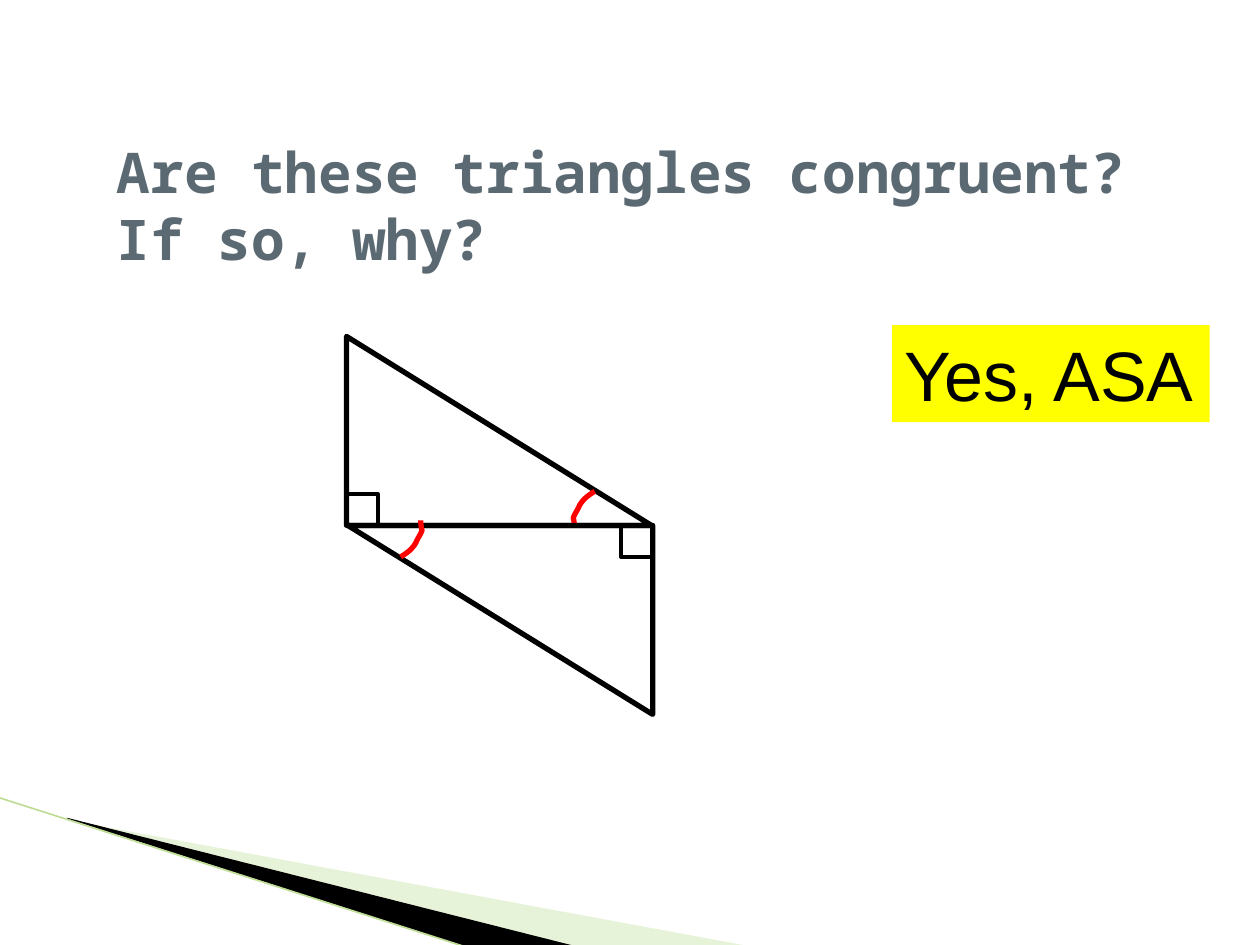
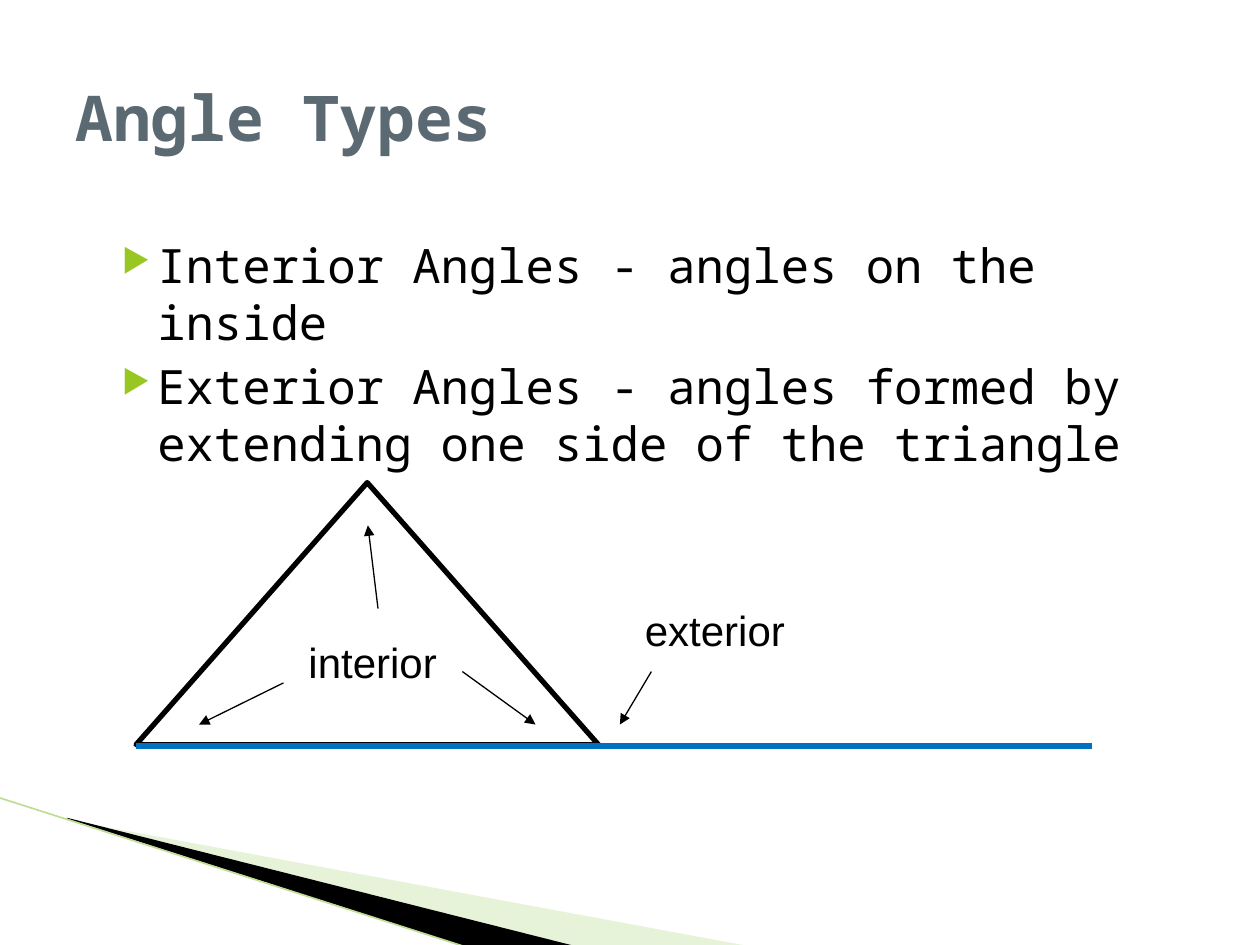
from lxml import etree
from pptx import Presentation
from pptx.dml.color import RGBColor
from pptx.enum.shapes import MSO_CONNECTOR, MSO_SHAPE
from pptx.enum.text import MSO_ANCHOR, MSO_AUTO_SIZE
from pptx.oxml.ns import qn
from pptx.util import Pt

PX = 9144
TITLE_FONT = BODY_FONT = "Noto Sans Mono"
LABEL_FONT = "Arial"
BLACK = "000000"
TITLE_COLOR = "5B6973"
BULLET_COLOR = "98C723"
PALE_BAND = "C5E19F"
BAND_EDGE = "BFDD95"
ANGLE_RED = "FF0000"
BASE_BLUE = "0070C0"
ANSWER_YELLOW = "FFFF00"
RIGHT_ANGLE_SIZE = 25
ARC_CURVES = [
    [(0, 0), (-5, 3), (-9, 6), (-12, 11)],
    [(-12, 11), (-13, 14), (-16, 18), (-17, 21)],
    [(-17, 21), (-16, 24), (-16, 29), (-16, 29)],
]


def color(hex_string):
    return RGBColor.from_string(hex_string)


def emu(*lengths):
    return [round(length * PX) for length in lengths]


def style_shape(shape, fill=None, line=None, width=0):
    shape.shadow.inherit = False
    if fill:
        shape.fill.solid()
        shape.fill.fore_color.rgb = color(fill)
    else:
        shape.fill.background()
    if line:
        shape.line.color.rgb = color(line)
        shape.line.width = Pt(width)
    else:
        shape.line.fill.background()


def add_outline(slide, points, closed=True, **style):
    corners = [emu(*point) for point in points]
    builder = slide.shapes.build_freeform(*corners[0], scale=1.0)
    builder.add_line_segments(corners[1:], close=closed)
    shape = builder.convert_to_shape()
    style_shape(shape, **style)
    return shape


def add_preset(slide, kind, box, rotation=0, **style):
    shape = slide.shapes.add_shape(kind, *emu(*box))
    shape.rotation = rotation
    style_shape(shape, **style)
    return shape


def add_line(slide, start, end, line_color, width, arrow=False):
    line = slide.shapes.add_connector(MSO_CONNECTOR.STRAIGHT, *emu(*start, *end))
    line.line.color.rgb = color(line_color)
    line.line.width = Pt(width)
    properties = line._element.spPr
    if arrow:
        etree.SubElement(properties.find(qn("a:ln")), qn("a:tailEnd"), type="triangle")
    etree.SubElement(properties, qn("a:effectLst"))


def format_font(paragraph, name, size, font_color, bold=False):
    font = paragraph.font
    font.name = name
    font.size = Pt(size)
    font.bold = bold
    font.color.rgb = color(font_color)


def write_label(shape, text, size):
    frame = shape.text_frame
    frame.text = text
    frame.word_wrap = False
    frame.auto_size = MSO_AUTO_SIZE.SHAPE_TO_FIT_TEXT
    frame.vertical_anchor = MSO_ANCHOR.TOP
    format_font(frame.paragraphs[0], LABEL_FONT, size, BLACK)


def add_label(slide, text, box):
    write_label(slide.shapes.add_textbox(*emu(*box)), text, 24)


def add_title(slide, text, box, size):
    frame = slide.shapes.add_textbox(*emu(*box)).text_frame
    frame.word_wrap = True
    frame.vertical_anchor = MSO_ANCHOR.MIDDLE
    frame.text = text
    format_font(frame.paragraphs[0], TITLE_FONT, size, TITLE_COLOR, bold=True)


def add_bullet(paragraph):
    properties = paragraph._p.get_or_add_pPr()
    margin, indent = emu(40, -28)
    properties.set("marL", str(margin))
    properties.set("indent", str(indent))
    bullet_color = etree.SubElement(properties, qn("a:buClr"))
    etree.SubElement(bullet_color, qn("a:srgbClr"), val=BULLET_COLOR)
    etree.SubElement(properties, qn("a:buSzPct"), val="68000")
    etree.SubElement(properties, qn("a:buChar"), char="▶")


def add_bullet_list(slide, items, box):
    frame = slide.shapes.add_textbox(*emu(*box)).text_frame
    frame.word_wrap = True
    frame.text = "\n".join(items)
    for position, paragraph in enumerate(frame.paragraphs):
        add_bullet(paragraph)
        format_font(paragraph, BODY_FONT, 27, BLACK)
        if position:
            paragraph.space_before = Pt(4)


def curve_point(controls, t):
    weights = [(1 - t) ** 3, 3 * t * (1 - t) ** 2, 3 * t ** 2 * (1 - t), t ** 3]
    return [sum(w * point[axis] for w, point in zip(weights, controls)) for axis in (0, 1)]


def add_angle_arc(slide, start, direction):
    offsets = [(0, 0)]
    for controls in ARC_CURVES:
        offsets += [curve_point(controls, step / 6) for step in range(1, 7)]
    points = [(start[0] + direction * x, start[1] + direction * y) for x, y in offsets]
    add_outline(slide, points, closed=False, line=ANGLE_RED, width=3)


def add_right_angle(slide, left, top):
    box = (left, top, RIGHT_ANGLE_SIZE, RIGHT_ANGLE_SIZE)
    add_preset(slide, MSO_SHAPE.RECTANGLE, box, line=BLACK, width=2.25)


def add_corner_bands(slide):
    pale = add_outline(slide, [(55, 651), (595, 751), (456, 751), (55, 650)], fill=PALE_BAND)
    pale_color = pale._element.spPr.find(qn("a:solidFill"))[0]
    etree.SubElement(pale_color, qn("a:alpha"), val="40000")
    add_outline(slide, [(53, 649), (457, 751), (372, 752), (54, 650)], fill=BLACK)
    add_line(slide, (-1, 633), (371, 752), BAND_EDGE, 0.95)


def add_slide(presentation):
    slide = presentation.slides.add_slide(presentation.slide_layouts[6])
    add_corner_bands(slide)
    return slide


def build_congruence_slide(presentation):
    slide = add_slide(presentation)
    halves = [
        ((275, 267), 0, (472, 390), 1, (275, 392)),
        ((276, 417), 180, (318, 442), -1, (493, 417)),
    ]
    for corner, rotation, arc_start, direction, right_angle in halves:
        add_preset(slide, MSO_SHAPE.RIGHT_TRIANGLE, (*corner, 242, 150), rotation,
                   line=BLACK, width=3)
        add_angle_arc(slide, arc_start, direction)
        add_right_angle(slide, *right_angle)
    answer = add_preset(slide, MSO_SHAPE.RECTANGLE, (708, 258, 252, 77), fill=ANSWER_YELLOW)
    write_label(answer, "Yes, ASA", 40)
    add_title(slide, "Are these triangles congruent?  If so, why?", (83, 100, 917, 125), 32)


def build_angle_types_slide(presentation):
    slide = add_slide(presentation)
    add_bullet_list(slide, [
        "Interior Angles - angles on the inside",
        "Exterior Angles - angles formed by extending one side of the triangle",
    ], (75, 183, 850, 200))
    add_title(slide, "Angle Types", (50, 30, 900, 125), 36)
    add_preset(slide, MSO_SHAPE.ISOSCELES_TRIANGLE, (108, 383, 367, 208), line=BLACK, width=3)
    add_line(slide, (108, 592), (867, 592), BASE_BLUE, 3)
    pointers = [
        ((300, 483), (292, 417)),
        ((225, 542), (158, 575)),
        ((367, 533), (425, 575)),
        ((517, 533), (492, 575)),
    ]
    for start, end in pointers:
        add_line(slide, start, end, BLACK, 0.75, arrow=True)
    add_label(slide, "interior", (235, 500, 123, 50))
    add_label(slide, "exterior", (502, 475, 133, 50))


def main():
    presentation = Presentation()
    presentation.slide_width, presentation.slide_height = emu(1000, 750)
    build_congruence_slide(presentation)
    build_angle_types_slide(presentation)
    presentation.save("out.pptx")


if __name__ == "__main__":
    main()
